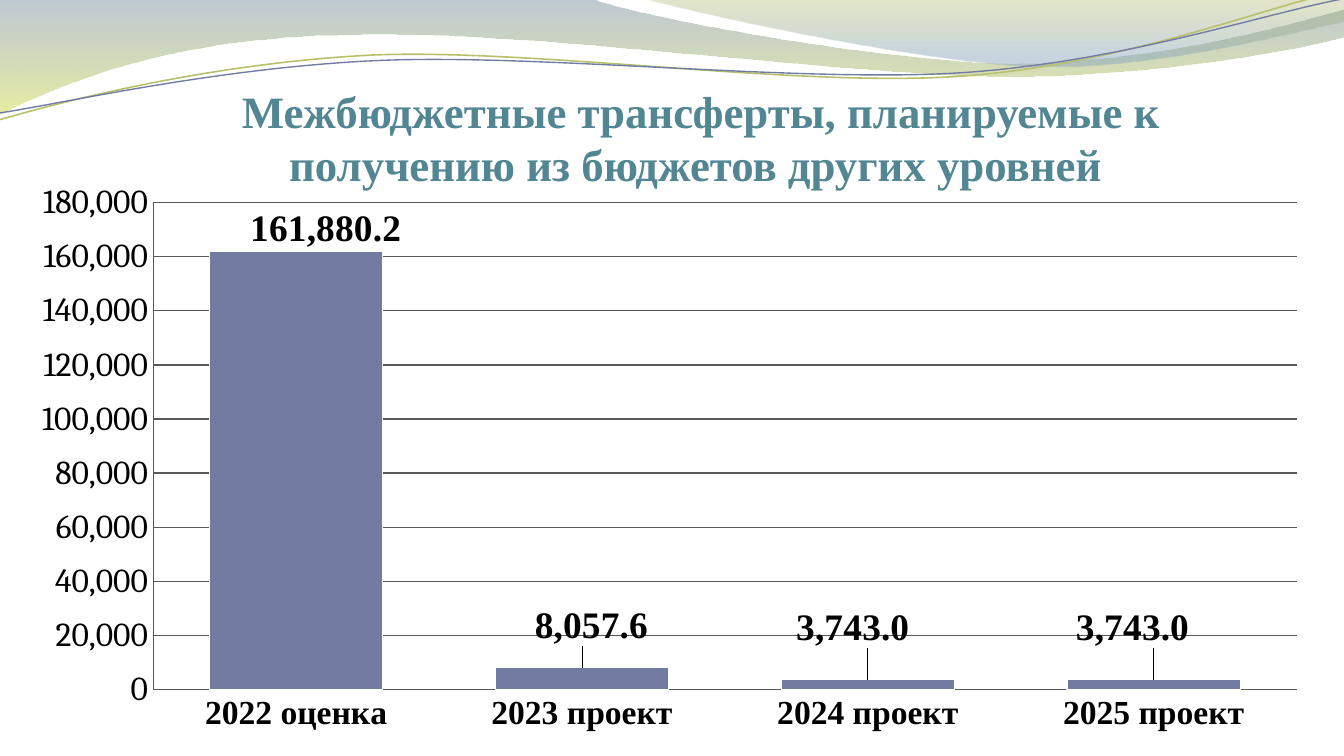
from dataclasses import dataclass

from lxml import etree
from pptx import Presentation
from pptx.chart import data as chart_data
from pptx.dml.color import RGBColor
from pptx.enum import chart as chart_enum, text
from pptx.oxml import ns
from pptx.util import Pt

SERIF = "Times New Roman"
ACCENT = "727CA3"
LABEL_FORMAT = "#,##0.0;[Red]#,##0.0"
CHART_WIDTH, CHART_HEIGHT = 700.6, 306
C15 = "http://schemas.microsoft.com/office/drawing/2012/chart"
Point = tuple[float, float]


@dataclass
class Stop:
    position: float
    color: str
    opacity: int


@dataclass
class Outline:
    points: list[Point]
    pattern: str


@dataclass
class Wave:
    outline: Outline
    stops: list[Stop]


@dataclass
class Strand:
    outline: Outline
    color: str
    width: float


@dataclass
class Bar:
    category: str
    value: float
    label_shift: Point


WAVES = [
    Wave(
        Outline([(0, 0), (316.8, -0.7),
                 (342.7, 9.4), (478.1, 33.8), (545.8, 33.8),
                 (614.2, 33.8), (689.8, 13.7), (720, 5), (720.7, 19.4),
                 (707.8, 23.8), (626.4, 41), (537.1, 41),
                 (447.8, 40.3), (275, 15.1), (185, 18.7),
                 (92.9, 19.4), (33.1, 44.6), (-0.7, 61.2), (0, 0)], "LCCLCCCL"),
        [Stop(0, "72889B", 45), Stop(1, "D3DE57", 55)],
    ),
    Wave(
        Outline([(344.9, -0.7), (366.5, 5.8), (491, 33.1), (553.7, 35.3),
                 (616.3, 37.4), (691.9, 17.3), (720, 11.5), (720, 0),
                 (344.9, -0.7)], "CCLL"),
        [Stop(0, "A4AC50", 30), Stop(0.8, "84A3BD", 45)],
    ),
]
STRANDS = [
    Strand(Outline([(0, 64.1), (34.6, 54), (113.8, 33.8), (199.4, 29.5),
                    (285.1, 25.9), (426.2, 46.8), (512.6, 41),
                    (599.8, 35.3), (676.1, 4.3), (718.6, -5)], "CCC"), "B9C06C", 0.85),
    Strand(Outline([(0, 60.5), (33.8, 55.4), (118.1, 36), (203.8, 32.4),
                    (290.2, 28.8), (429.8, 44.6), (516.2, 38.9),
                    (601.9, 33.1), (677.5, 7.2), (720, -0.7)], "CCC"), ACCENT, 0.75),
]
BARS = [
    Bar("2022 оценка", 161880.2, (15.9, 2.1)),
    Bar("2023 проект", 8057.6, (5.1, -8.4)),
    Bar("2024 проект", 3743.0, (-8, -13.6)),
    Bar("2025 проект", 3743.0, (-11.3, -13.6)),
]


def rgb(value: str) -> RGBColor:
    return RGBColor.from_string(value)


def style_font(font, name: str, size: float, color: str, bold: bool) -> None:
    font.name, font.size, font.bold = name, Pt(size), bold
    font.color.rgb = rgb(color)


def add_outline(page, outline: Outline, close: bool):
    corners = [(Pt(x), Pt(y)) for x, y in outline.points]
    builder = page.shapes.build_freeform(*corners[0])
    builder.add_line_segments(corners[1:], close=close)
    shape = builder.convert_to_shape()
    shape.shadow.inherit = False
    segments = iter(list(shape._element.iter(ns.qn("a:lnTo"))))
    for kind in outline.pattern:
        segment = next(segments)
        if kind == "C":
            curve = etree.Element(ns.qn("a:cubicBezTo"))
            segment.addprevious(curve)
            for part in (segment, next(segments), next(segments)):
                curve.append(part[0])
                part.getparent().remove(part)
    return shape


def draw_wave(page, wave: Wave) -> None:
    shape = add_outline(page, wave.outline, True)
    shape.line.fill.background()
    shape.fill.gradient()
    shape.fill.gradient_angle = 270
    for target, stop in zip(shape.fill.gradient_stops, wave.stops):
        target.position = stop.position
        target.color.rgb = rgb(stop.color)
    for color, stop in zip(shape._element.spPr.iter(ns.qn("a:srgbClr")), wave.stops):
        etree.SubElement(color, ns.qn("a:alpha"), val=str(stop.opacity * 1000))


def draw_strand(page, strand: Strand) -> None:
    shape = add_outline(page, strand.outline, False)
    shape.fill.background()
    shape.line.color.rgb = rgb(strand.color)
    shape.line.width = Pt(strand.width)


def manual_layout(**settings):
    layout = etree.Element(ns.qn("c:layout"))
    manual = etree.SubElement(layout, ns.qn("c:manualLayout"))
    for tag, value in settings.items():
        etree.SubElement(manual, ns.qn(f"c:{tag}"), val=str(value))
    return layout


def draw_title(page) -> None:
    title = page.shapes.title
    title.left, title.top, title.width, title.height = Pt(31), Pt(41), Pt(689), Pt(58.3)
    frame = title.text_frame
    frame.word_wrap = True
    frame.auto_size = text.MSO_AUTO_SIZE.NONE
    frame.vertical_anchor = text.MSO_ANCHOR.TOP
    frame.text = ("Межбюджетные трансферты, планируемые к\n"
                  "получению из бюджетов других уровней ")
    for para in frame.paragraphs:
        para.alignment = text.PP_ALIGN.CENTER
        para.line_spacing = 1.0
        para.space_before = Pt(0)
        for span in para.runs:
            style_font(span.font, SERIF, 24, "528693", True)


def draw_label(point, bar: Bar) -> None:
    label = point.data_label
    style_font(label.font, SERIF, 20, "000000", True)
    label.position = chart_enum.XL_LABEL_POSITION.OUTSIDE_END
    x, y = bar.label_shift
    layout = manual_layout(x=x / CHART_WIDTH, y=y / CHART_HEIGHT)
    label._dLbl.find(ns.qn("c:idx")).addnext(layout)
    layout.addnext(etree.Element(ns.qn("c:numFmt"), formatCode=LABEL_FORMAT, sourceLinked="0"))


def hide_leader_lines(labels) -> None:
    element = labels._element
    for flag in element.findall(ns.qn("c:showLeaderLines")):
        element.remove(flag)
    extras = etree.SubElement(element, ns.qn("c:extLst"))
    extra = etree.SubElement(extras, ns.qn("c:ext"), nsmap={"c15": C15},
                             uri="{CE6537A1-D6FC-4f65-9D91-7224C49458BB}")
    etree.SubElement(extra, f"{{{C15}}}showLeaderLines", val="0")


def draw_chart(page) -> None:
    data = chart_data.CategoryChartData()
    data.categories = [bar.category for bar in BARS]
    data.add_series("Series 1", [bar.value for bar in BARS])
    chart = page.shapes.add_chart(chart_enum.XL_CHART_TYPE.COLUMN_CLUSTERED, Pt(8.6), Pt(92.2),
                                  Pt(CHART_WIDTH), Pt(CHART_HEIGHT), data).chart
    chart.has_title = chart.has_legend = False
    style_font(chart.font, "Cambria", 18, "000000", False)
    area = chart._chartSpace.chart.plotArea
    for layout in area.findall(ns.qn("c:layout")):
        area.remove(layout)
    area.insert(0, manual_layout(layoutTarget="inner", xMode="edge", yMode="edge",
                                 x=73.5 / CHART_WIDTH, y=16.3 / CHART_HEIGHT,
                                 w=612.6 / CHART_WIDTH, h=261 / CHART_HEIGHT))

    values, categories = chart.value_axis, chart.category_axis
    values.minimum_scale, values.maximum_scale, values.major_unit = 0, 180000, 20000
    values.has_major_gridlines = True
    values.tick_labels.number_format = "#,##0"
    values.tick_labels.number_format_is_linked = False
    style_font(categories.tick_labels.font, SERIF, 18, "000000", True)
    for axis in (values, categories):
        axis.major_tick_mark = chart_enum.XL_TICK_MARK.NONE
    for line in (values.format.line, categories.format.line, values.major_gridlines.format.line):
        line.color.rgb = rgb("595959")
        line.width = Pt(0.75)

    plot = chart.plots[0]
    plot.gap_width = 65
    plot.vary_by_categories = False
    series = plot.series[0]
    series.format.fill.solid()
    series.format.fill.fore_color.rgb = rgb(ACCENT)
    series.format.line.color.rgb = rgb("FFFFFF")
    series.format.line.width = Pt(0.75)
    labels = series.data_labels
    labels.show_value = True
    labels.number_format = LABEL_FORMAT
    labels.number_format_is_linked = False
    style_font(labels.font, SERIF, 20, "000000", True)
    for index, bar in enumerate(BARS):
        draw_label(series.points[index], bar)
    hide_leader_lines(labels)


def main() -> None:
    deck = Presentation()
    deck.slide_width, deck.slide_height = Pt(720), Pt(405)
    page = deck.slides.add_slide(deck.slide_layouts[5])
    for wave in WAVES:
        draw_wave(page, wave)
    for strand in STRANDS:
        draw_strand(page, strand)
    draw_title(page)
    draw_chart(page)
    deck.save("out.pptx")


if __name__ == "__main__":
    main()
